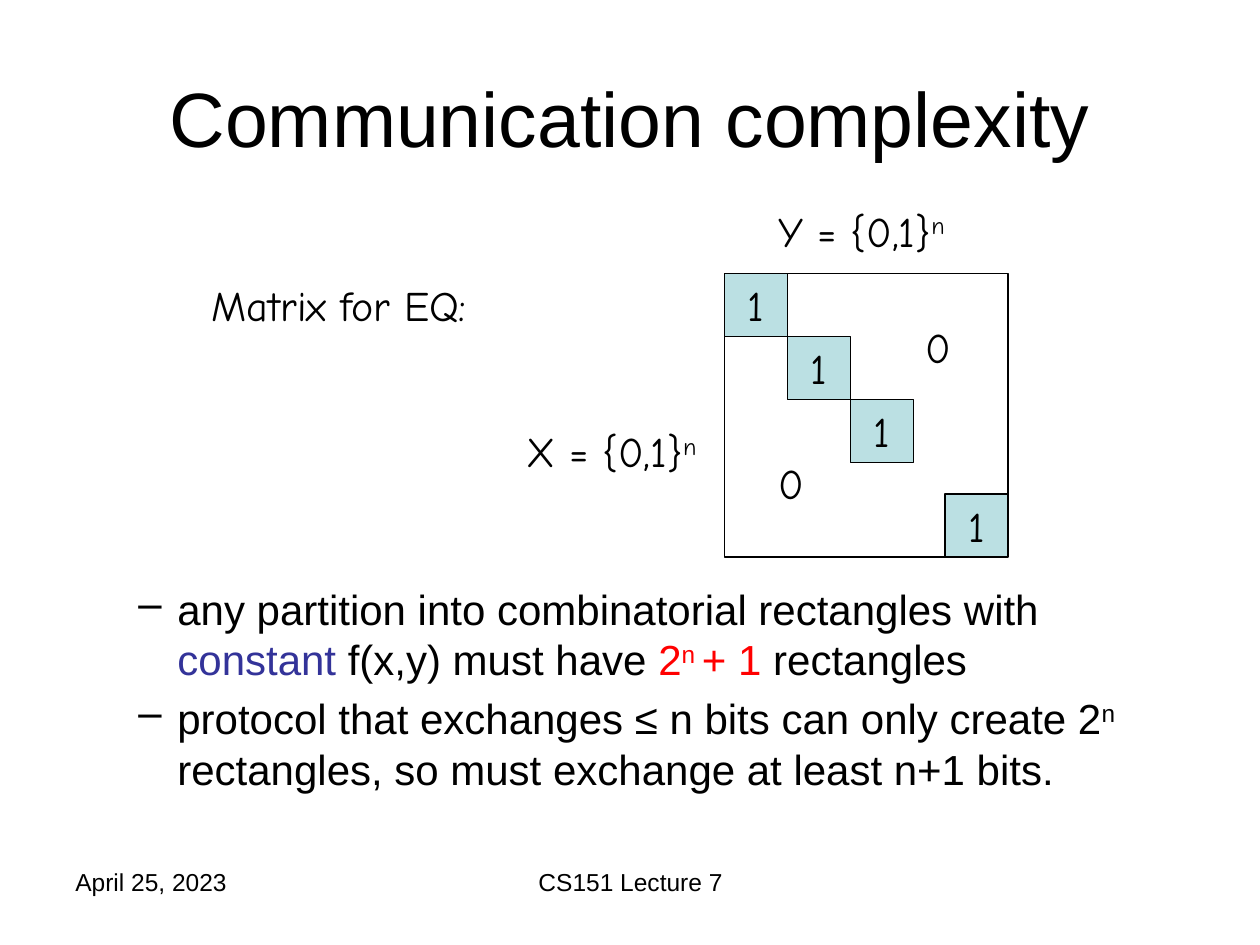
from lxml.etree import SubElement
from pptx import Presentation
from pptx.dml.color import RGBColor
from pptx.enum.shapes import MSO_SHAPE
from pptx.enum.text import MSO_ANCHOR, MSO_AUTO_SIZE, PP_ALIGN
from pptx.oxml.ns import qn
from pptx.util import Inches, Pt

BLACK = RGBColor(0x00, 0x00, 0x00)
BLUE = RGBColor(0x33, 0x33, 0x99)
RED = RGBColor(0xFF, 0x00, 0x00)
PALE_TEAL = RGBColor(0xBB, 0xE0, 0xE3)

MATRIX_LEFT, MATRIX_TOP, MATRIX_SIZE = 5.75, 2.17, 2.25
CELL_SIZE = 0.5
DIAGONAL_OFFSETS = (0, 0.5, 1, MATRIX_SIZE - CELL_SIZE)


def add_span(para, text, font="Arial", size=24, color=BLACK, raised=False):
    span = para.add_run()
    span.text = text
    span.font.name = font
    span.font.size = Pt(size)
    span.font.color.rgb = color
    if raised:
        span._r.get_or_add_rPr().set("baseline", "30000")


class SlideBuilder:
    body_font = "Arial"
    sketch_font = "Comic Neue"
    line_width = Pt(0.75)

    def __init__(self, page):
        self.page = page

    def text_box(self, left, top, width, height, anchor=MSO_ANCHOR.TOP, wrap=True):
        box = self.page.shapes.add_textbox(
            Inches(left), Inches(top), Inches(width), Inches(height))
        box.text_frame.word_wrap = wrap
        box.text_frame.vertical_anchor = anchor
        return box.text_frame

    def line_of_text(self, text, *place, size=14, align=PP_ALIGN.LEFT,
                     anchor=MSO_ANCHOR.TOP):
        para = self.text_box(*place, anchor=anchor).paragraphs[0]
        para.alignment = align
        add_span(para, text, font=self.body_font, size=size)

    def label(self, text, *place, exponent=None, wrap=True):
        """Add a handwritten-style label that grows with its text."""
        frame = self.text_box(*place, wrap=wrap)
        frame.auto_size = MSO_AUTO_SIZE.SHAPE_TO_FIT_TEXT
        para = frame.paragraphs[0]
        add_span(para, text, font=self.sketch_font)
        if exponent:
            add_span(para, exponent, font=self.sketch_font, raised=True)

    def square(self, left, top, size, fill=None, text=None):
        shape = self.page.shapes.add_shape(
            MSO_SHAPE.RECTANGLE, Inches(left), Inches(top), Inches(size), Inches(size))
        shape.shadow.inherit = False
        shape.line.color.rgb = BLACK
        shape.line.width = self.line_width
        if fill is None:
            shape.fill.background()
        else:
            shape.fill.solid()
            shape.fill.fore_color.rgb = fill
        if text:
            frame = shape.text_frame
            frame.auto_size = MSO_AUTO_SIZE.SHAPE_TO_FIT_TEXT
            frame.vertical_anchor = MSO_ANCHOR.TOP
            para = frame.paragraphs[0]
            para.alignment = PP_ALIGN.CENTER
            add_span(para, text, font=self.sketch_font)

    def dash_list(self, items, *place):
        """Each item is a list of (text, format) pairs."""
        frame = self.text_box(*place)
        for index, item in enumerate(items):
            para = frame.add_paragraph() if index else frame.paragraphs[0]
            para.space_before = Pt(5)
            properties = para._p.get_or_add_pPr()
            properties.set("marL", str(Inches(0.81)))
            properties.set("indent", str(Inches(-0.31)))
            SubElement(properties, qn("a:buChar")).set("char", "–")
            for text, style in item:
                add_span(para, text, font=self.body_font, **style)


def main():
    deck = Presentation()
    deck.slide_width, deck.slide_height = Inches(10), Inches(7.5)
    builder = SlideBuilder(deck.slides.add_slide(deck.slide_layouts[6]))

    builder.line_of_text("Communication complexity", 0.5, 0.3, 9, 1.25, size=44,
                         align=PP_ALIGN.CENTER, anchor=MSO_ANCHOR.MIDDLE)
    builder.dash_list([
        [("any partition into combinatorial rectangles with ", {}),
         ("constant", {"color": BLUE}),
         (" f(x,y) must have ", {}),
         ("2", {"color": RED}),
         ("n ", {"color": RED, "raised": True}),
         ("+ 1", {"color": RED}),
         (" rectangles", {})],
        [("protocol that exchanges ≤ n bits can only create 2", {}),
         ("n", {"raised": True}),
         (" rectangles, so must exchange at least n+1 bits.", {})],
    ], 0.5, 4.58, 9, 2.12)

    builder.square(MATRIX_LEFT, MATRIX_TOP, MATRIX_SIZE)
    builder.label("X = {0,1}", 4.08, 3.33, 2.08, 0.5, exponent="n")
    builder.label("Y = {0,1}", 6.08, 1.58, 1.59, 0.5, exponent="n", wrap=False)
    for offset in DIAGONAL_OFFSETS:
        builder.square(MATRIX_LEFT + offset, MATRIX_TOP + offset, CELL_SIZE,
                       fill=PALE_TEAL, text="1")
    for left, top in ((6.08, 3.58), (7.25, 2.5)):
        builder.label("0", left, top, 0.58, 0.5)
    builder.label("Matrix for EQ:", 1.58, 2.17, 2.58, 0.5)

    builder.line_of_text("April 25, 2023", 0.5, 6.83, 2.33, 0.52)
    builder.line_of_text("CS151 Lecture 7", 3.42, 6.83, 3.17, 0.52,
                         align=PP_ALIGN.CENTER)
    deck.save("out.pptx")


if __name__ == "__main__":
    main()
